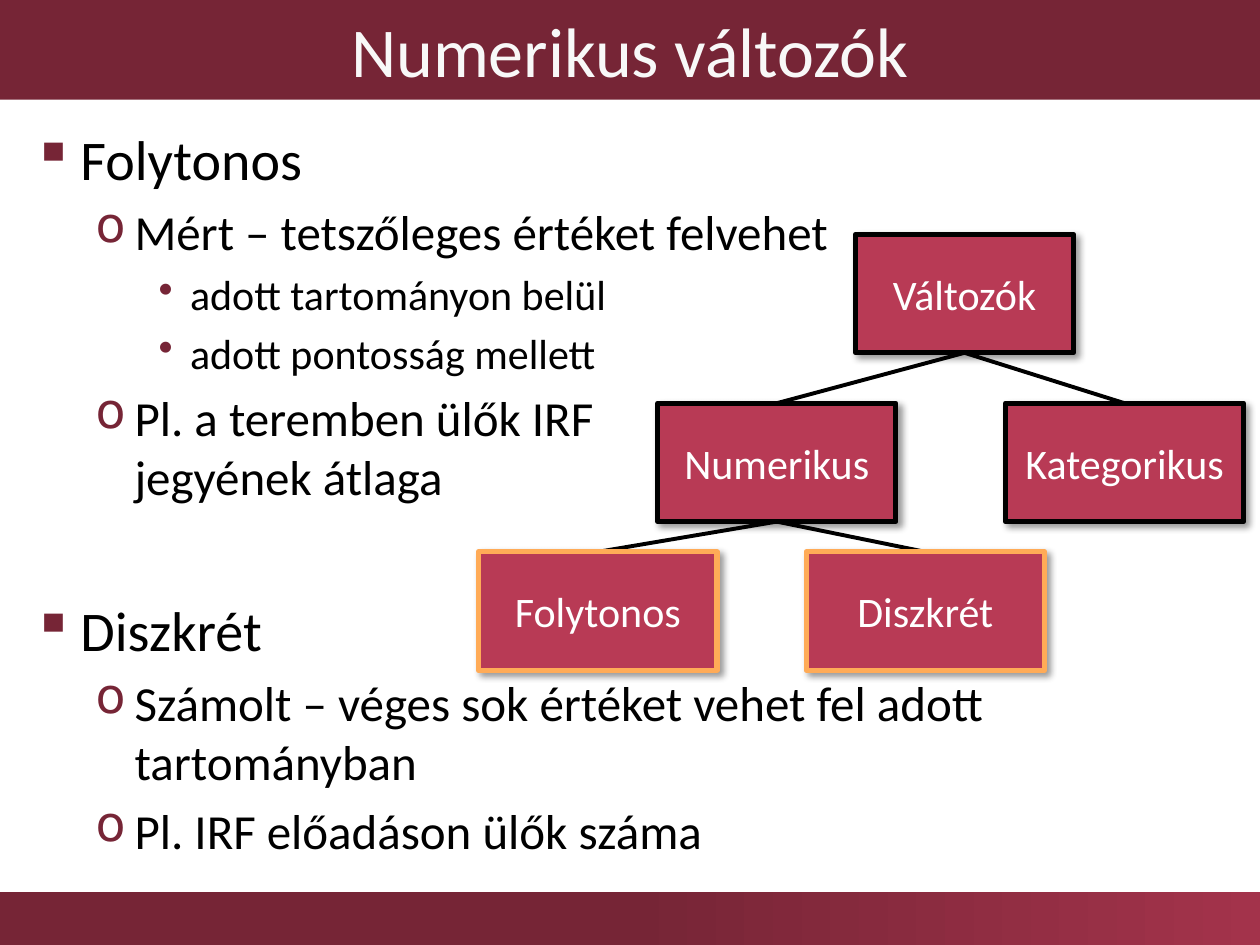
import dataclasses
import typing

import pptx
import pptx.dml.color
import pptx.enum.shapes
import pptx.enum.text
import pptx.oxml.ns
import pptx.util
from lxml import etree

Inches = pptx.util.Inches
Pt = pptx.util.Pt
qn = pptx.oxml.ns.qn


@dataclasses.dataclass(frozen=True)
class Theme:
    font: str = "Calibri"
    maroon: str = "762536"
    maroon_light: str = "A3334B"
    node_fill: str = "B83A55"
    highlight: str = "FFAB57"
    black: str = "000000"
    white: str = "FFFFFF"
    title_text: str = "F8F8F8"
    title_size: int = 40
    node_size: int = 24
    node_border: float = 3
    branch_width: float = 2.25


THEME = Theme()


class Level(typing.NamedTuple):
    bullet: str
    size: int
    indent: float
    hanging: float


class Item(typing.NamedTuple):
    level: int
    text: str
    extra_space: float = 0


@dataclasses.dataclass(frozen=True)
class Node:
    text: str
    left: float
    top: float
    width: float = 1.89
    border: str = THEME.black
    height: float = 0.94


LEVELS = (
    Level("▪", 32, 0.38, 0.38),
    Level("o", 28, 0.81, 0.31),
    Level("•", 24, 1.25, 0.25),
)
ITEMS = (
    Item(0, "Folytonos"),
    Item(1, "Mért – tetszőleges értéket felvehet"),
    Item(2, "adott tartományon belül"),
    Item(2, "adott pontosság mellett"),
    Item(1, "Pl. a teremben ülők IRF\vjegyének átlaga"),
    Item(0, "Diszkrét", extra_space=45),
    Item(1, "Számolt – véges sok értéket vehet fel adott tartományban"),
    Item(1, "Pl. IRF előadáson ülők száma"),
)
NODES = {
    "variables": Node("Változók", 6.79, 1.86, width=1.73),
    "numeric": Node("Numerikus", 5.22, 3.2),
    "categorical": Node("Kategorikus", 7.98, 3.2),
    "continuous": Node("Folytonos", 3.8, 4.38, border=THEME.highlight),
    "discrete": Node("Diszkrét", 6.4, 4.38, border=THEME.highlight),
}
BRANCHES = (
    ("variables", "categorical"),
    ("variables", "numeric"),
    ("numeric", "continuous"),
    ("numeric", "discrete"),
)


def rgb(value: str) -> pptx.dml.color.RGBColor:
    return pptx.dml.color.RGBColor.from_string(value)


def set_font(run, size: float, color: str) -> None:
    for name, value in {"name": THEME.font, "size": Pt(size)}.items():
        setattr(run.font, name, value)
    run.font.color.rgb = rgb(color)


def add_box(slide, left: float, top: float, width: float, height: float):
    """Add a rectangle without outline or shadow."""
    box = slide.shapes.add_shape(
        pptx.enum.shapes.MSO_SHAPE.RECTANGLE,
        Inches(left), Inches(top), Inches(width), Inches(height))
    box.shadow.inherit = False
    box.line.fill.background()
    return box


def fill_box(box, color: str, text: str, size: float, text_color: str) -> None:
    box.fill.solid()
    box.fill.fore_color.rgb = rgb(color)
    frame = box.text_frame
    frame.vertical_anchor = pptx.enum.text.MSO_ANCHOR.MIDDLE
    paragraph = frame.paragraphs[0]
    paragraph.alignment = pptx.enum.text.PP_ALIGN.CENTER
    run = paragraph.add_run()
    run.text = text
    set_font(run, size, text_color)


def add_footer(slide) -> None:
    footer = add_box(slide, 0, 7.08, 10, 0.42)
    footer.fill.gradient()
    footer.fill.gradient_angle = 0
    stops = ((0.5, THEME.maroon), (1, THEME.maroon_light))
    for stop, (position, color) in zip(footer.fill.gradient_stops, stops):
        stop.position = position
        stop.color.rgb = rgb(color)


def add_bullet(paragraph, level: Level) -> None:
    properties = paragraph._p.get_or_add_pPr()
    properties.set("marL", str(Inches(level.indent)))
    properties.set("indent", str(-Inches(level.hanging)))
    color = etree.SubElement(properties, qn("a:buClr"))
    etree.SubElement(color, qn("a:srgbClr"), val=THEME.maroon)
    etree.SubElement(properties, qn("a:buChar"), char=level.bullet)


def add_body(slide) -> None:
    body = slide.shapes.add_textbox(
        Inches(0.16), Inches(0.94), Inches(9.69), Inches(6.05))
    frame = body.text_frame
    frame.word_wrap = True
    for index, item in enumerate(ITEMS):
        level = LEVELS[item.level]
        paragraph = frame.add_paragraph() if index else frame.paragraphs[0]
        paragraph.text = item.text
        paragraph.level = item.level
        add_bullet(paragraph, level)
        if index:
            paragraph.space_before = Pt(0.2 * level.size + item.extra_space)
        for run in paragraph.runs:
            set_font(run, level.size, THEME.black)


def add_shadow(box) -> None:
    effects = box._element.spPr.find(qn("a:effectLst"))
    shadow = etree.SubElement(
        effects, qn("a:outerShdw"), blurRad=str(Pt(4)), dist=str(Pt(3)),
        dir="2700000", algn="tl", rotWithShape="0")
    color = etree.SubElement(shadow, qn("a:srgbClr"), val=THEME.black)
    etree.SubElement(color, qn("a:alpha"), val="40000")


def add_node(slide, node: Node):
    box = add_box(slide, node.left, node.top, node.width, node.height)
    fill_box(box, THEME.node_fill, node.text, THEME.node_size, THEME.white)
    box.line.color.rgb = rgb(node.border)
    box.line.width = Pt(THEME.node_border)
    add_shadow(box)
    return box


def add_branch(slide):
    """Add a line whose ends are placed later, when it is joined to nodes."""
    branch = slide.shapes.add_connector(
        pptx.enum.shapes.MSO_CONNECTOR.STRAIGHT, 0, 0, 0, 0)
    branch.line.color.rgb = rgb(THEME.black)
    branch.line.width = Pt(THEME.branch_width)
    etree.SubElement(branch._element.spPr, qn("a:effectLst"))
    return branch


def main() -> None:
    deck = pptx.Presentation()
    deck.slide_width, deck.slide_height = Inches(10), Inches(7.5)
    slide = deck.slides.add_slide(deck.slide_layouts[6])

    add_footer(slide)
    branches = [add_branch(slide) for _ in BRANCHES]
    title = add_box(slide, 0, 0, 10, 0.79)
    fill_box(title, THEME.maroon, "Numerikus változók",
             THEME.title_size, THEME.title_text)
    add_body(slide)
    boxes = {key: add_node(slide, node) for key, node in NODES.items()}
    for branch, (parent, child) in zip(branches, BRANCHES):
        branch.begin_connect(boxes[parent], 2)
        branch.end_connect(boxes[child], 0)

    deck.save("out.pptx")


if __name__ == "__main__":
    main()
